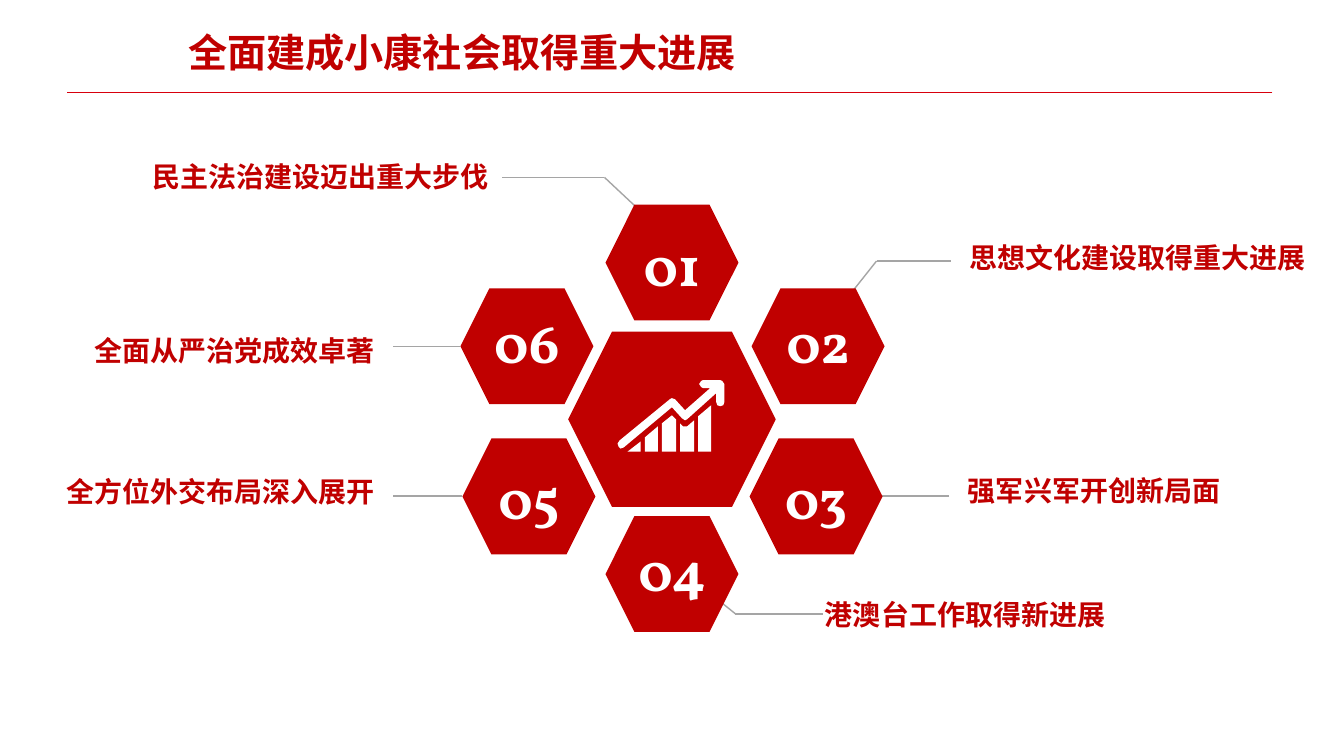
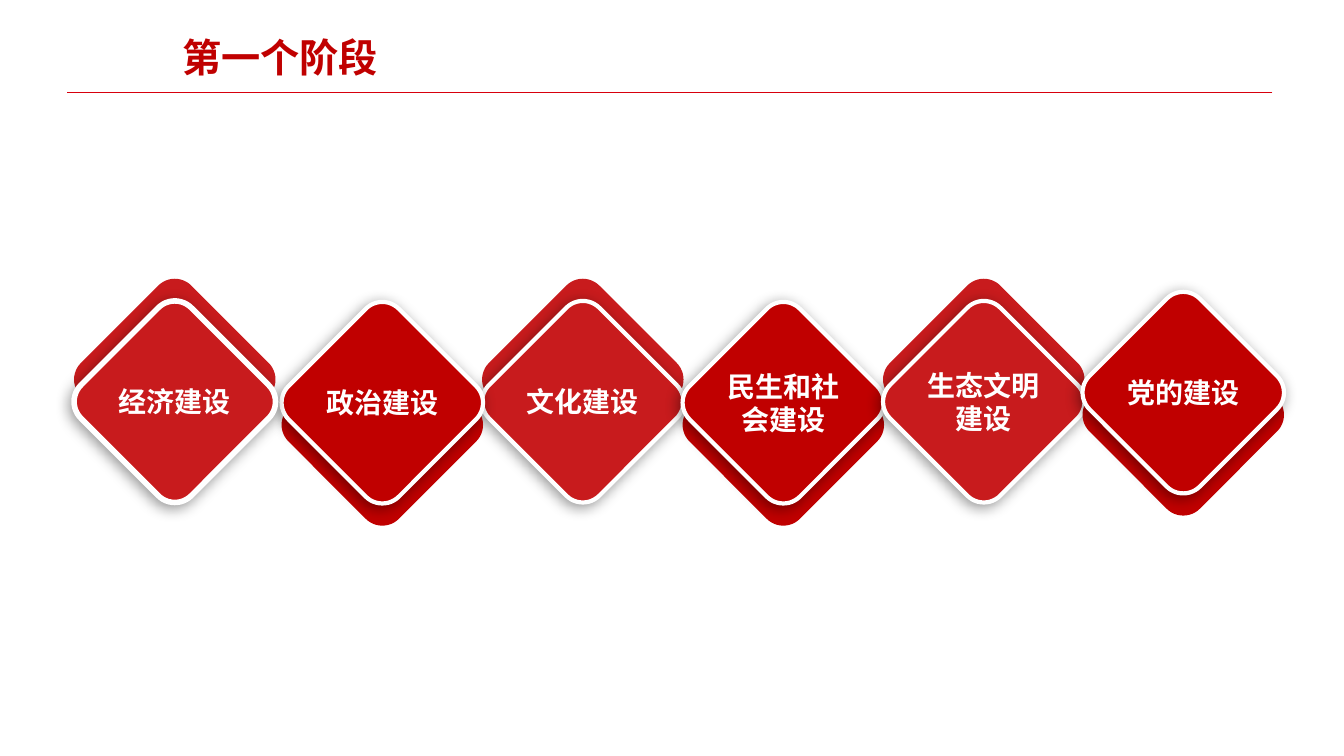
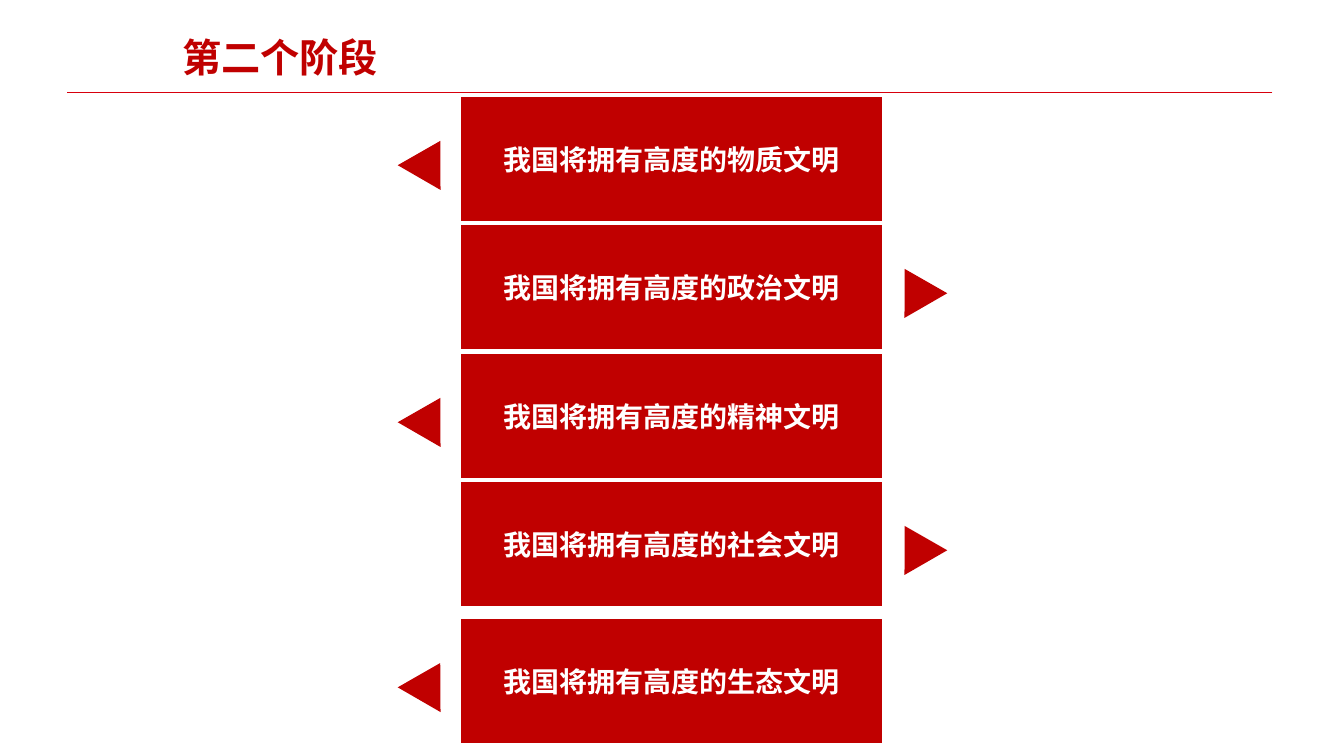
from lxml.etree import SubElement
from pptx import Presentation
from pptx.dml.color import RGBColor
from pptx.enum.shapes import MSO_CONNECTOR, MSO_SHAPE as SHAPE
from pptx.enum.text import MSO_ANCHOR as ANCHOR, PP_ALIGN as ALIGN
from pptx.oxml.ns import qn
from pptx.util import Inches, Pt

COLORS = {"red": "C00000", "bright": "C81B1D", "rule": "D7000D",
          "gray": "A5A5A5", "white": "FFFFFF", "black": "000000"}
SANS, SERIF = "Noto Sans CJK SC", "Vollkorn"
CELL = Inches(0.1)  # columns and rows of the grid are equally large
COLUMNS, ROWS = 133.4, 75


def add_shape(page, kind, cells, color, outline=0):
    """Add a flat shape; cells are left, top, width and height on the grid."""
    shape = page.shapes.add_shape(kind, *[int(n * CELL) for n in cells])
    shape.shadow.inherit = False
    shape.fill.solid()
    shape.fill.fore_color.rgb = RGBColor.from_string(COLORS[color])
    if outline:
        shape.line.color.rgb = RGBColor.from_string(COLORS["white"])
        shape.line.width = Pt(outline)
    else:
        shape.line.fill.background()
    return shape


def add_text(page, cells, text, size, color, align=ALIGN.LEFT, font=SANS, inset=0, wrap=True):
    """Add a bold text box; inset is its side margin in cells."""
    box = page.shapes.add_textbox(*[int(n * CELL) for n in cells])
    frame = box.text_frame
    frame.word_wrap = wrap
    frame.margin_left = frame.margin_right = int(inset * CELL)
    frame.margin_top = frame.margin_bottom = int(inset * CELL / 2)
    frame.text = text
    para = frame.paragraphs[0]
    para.alignment = align
    span = para.runs[0]
    span.font.size, span.font.bold, span.font.name = Pt(size), True, font
    span.font.color.rgb = RGBColor.from_string(COLORS[color])
    SubElement(span.font._element, qn("a:ea")).set("typeface", font)
    return frame


deck = Presentation()
deck.slide_width, deck.slide_height = int(COLUMNS * CELL), ROWS * CELL

# Pages with their titles
pages = []
for title, left, top in [("全面建成小康社会取得重大进展", 17.7, 2.3),
                         ("第一个阶段", 17.1, 2.8), ("第二个阶段", 17.1, 2.8)]:
    page = deck.slides.add_slide(deck.slide_layouts[6])
    add_text(page, (left, top, 99.1, 5.7), title, 28, "red", inset=1)
    pages.append(page)
progress, first_stage, second_stage = pages

# Rule under every title, and leaders from the hexagons to their labels
lines = [(page, "rule", 0.75, [(126.3, 9.2), (6.7, 9.2)]) for page in pages]
lines += [(progress, "gray", 1, points) for points in [
    [(63.1, 20.5), (60, 17.6), (49.8, 17.6)],
    [(84.7, 28.8), (87, 25.9), (94.4, 25.9)],
    [(94.2, 49.2), (87.5, 49.2)],
    [(70.4, 58.8), (73, 60.9), (81.7, 60.9)],
    [(45.9, 49.2), (39, 49.2)],
    [(45.7, 34.4), (39, 34.4)],
]]
for page, color, width, points in lines:
    for start, end in zip(points, points[1:]):
        ends = [int(n * CELL) for n in start + end]
        line = page.shapes.add_connector(MSO_CONNECTOR.STRAIGHT, *ends)
        line.line.color.rgb = RGBColor.from_string(COLORS[color])
        line.line.width = Pt(width)
        SubElement(line.element.spPr, qn("a:effectLst"))

# Page 1: numbered hexagons (left, top, line spacing) around a large one
hexagons = [(60.1, 20.3, 1.2), (74.6, 28.6, 1), (74.4, 43.5, 1.2),
            (60.1, 51.2, 1), (45.9, 43.5, 1.2), (45.7, 28.6, 1)]
for number, (left, top, spacing) in enumerate(hexagons, 1):
    add_shape(progress, SHAPE.HEXAGON, (left, top, 13.2, 11.5), "red")
    drop, height = (1.2, 9.1) if spacing > 1 else (1.9, 7.7)
    frame = add_text(progress, (left + 1.6, top + drop, 10, height), f"{number:02}", 40,
                     "white", ALIGN.CENTER, SERIF)
    frame.paragraphs[0].line_spacing = float(spacing)
add_shape(progress, SHAPE.HEXAGON, (56.4, 32.9, 20.6, 17.4), "red")

# Growth chart icon, in tenths of a cell: five bars and a rising arrow
icon = [
    [(636, 438), (636, 448), (623, 448)],
    [(653, 423), (653, 448), (640, 448), (640, 434)],
    [(667, 412), (671, 416), (671, 448), (657, 448), (657, 420)],
    [(689, 417), (689, 448), (675, 448), (675, 420), (678, 423), (682, 423)],
    [(706, 402), (706, 448), (693, 448), (693, 413)],
    [(719, 381), (717, 378), (715, 377), (698, 377), (696, 378), (694, 381),
     (696, 384), (698, 385), (705, 385), (680, 407), (670, 396), (667, 395),
     (665, 396), (615, 437), (613, 440), (614, 443), (616, 445), (619, 444),
     (667, 404), (677, 415), (680, 417), (682, 416), (711, 390), (711, 399),
     (712, 402), (715, 403), (718, 402), (719, 399)],
]
for start, *others in icon:
    builder = progress.shapes.build_freeform(*start, scale=CELL / 10)
    builder.add_line_segments(others, close=True)
    piece = builder.convert_to_shape()
    piece.shadow.inherit = False
    piece.fill.solid()
    piece.fill.fore_color.rgb = RGBColor.from_string(COLORS["white"])
    piece.line.fill.background()

# Labels beside the hexagons
for text, left, top, width, align in [
    ("民主法治建设迈出重大步伐", 13.8, 15.3, 35.7, ALIGN.RIGHT),
    ("思想文化建设取得重大进展", 95.2, 23.4, 35.7, ALIGN.LEFT),
    ("强军兴军开创新局面", 95.1, 46.5, 27.3, ALIGN.LEFT),
    ("港澳台工作取得新进展", 80.9, 58.8, 30.1, ALIGN.LEFT),
    ("全方位外交布局深入展开", 5.3, 46.6, 32.9, ALIGN.RIGHT),
    ("全面从严治党成效卓著", 8.1, 32.6, 30.1, ALIGN.RIGHT),
]:
    add_text(progress, (left, top, width, 4.4), text, 20, "red", align, inset=1, wrap=False)

# Page 2: diamonds from back to front, each over an offset one
SIDE, SHIFT = 15.5, 2.2
TEXT_WIDTH, TEXT_HEIGHT = 13.2, 2.9
for text, left, top, color, outline in [
    ("文化建设", 50.1, 32.1, "bright", 3),
    ("政治建设", 30.2, 32.2, "red", 3),
    ("经济建设", 9.6, 32.1, "bright", 4),
    ("民生和社会建设", 70, 32.2, "red", 3),
    ("生态文明建设", 89.9, 32.1, "bright", 3),
    ("党的建设", 109.7, 31.2, "red", 3),
]:
    shift = -SHIFT if color == "bright" else SHIFT
    for row, width in [(top + shift, 0), (top, outline)]:
        diamond = add_shape(first_stage, SHAPE.ROUNDED_RECTANGLE,
                            (left, row, SIDE, SIDE), color, width)
        diamond.adjustments[0] = 0.15
        diamond.rotation = 315
    # Soft shadow under the front diamond
    effects = diamond.element.spPr.find(qn("a:effectLst"))
    shadow = SubElement(effects, qn("a:outerShdw"), blurRad=str(Pt(10)), dist=str(Pt(3)),
                        dir="8100000", algn="ctr", rotWithShape="0")
    tint = SubElement(shadow, qn("a:srgbClr"), val=COLORS["black"])
    SubElement(tint, qn("a:alpha"), val="40000")
    cells = (left + (SIDE - TEXT_WIDTH) / 2, top + (SIDE - TEXT_HEIGHT) / 2,
             TEXT_WIDTH, TEXT_HEIGHT)
    frame = add_text(first_stage, cells, text, 20, "white", ALIGN.CENTER)
    frame.vertical_anchor = ANCHOR.MIDDLE

# Page 3: stacked bars with triangles pointing left and right in turn
bars = [("物质", 9.5), ("政治", 22.2), ("精神", 35), ("社会", 47.7), ("生态", 61.3)]
for index, (topic, top) in enumerate(bars):
    cells = (45.65, top, 42, 12.6)
    add_shape(second_stage, SHAPE.RECTANGLE, cells, "red", 2)
    frame = add_text(second_stage, cells, f"我国将拥有高度的{topic}文明", 20, "white", ALIGN.CENTER)
    frame.vertical_anchor = ANCHOR.MIDDLE
    left, angle = (88.4, 330) if index % 2 else (40.2, 30)
    triangle = add_shape(second_stage, SHAPE.ISOSCELES_TRIANGLE, (left, top + 4.2, 4.9, 4.2), "red")
    triangle.rotation = angle

deck.save("out.pptx")
